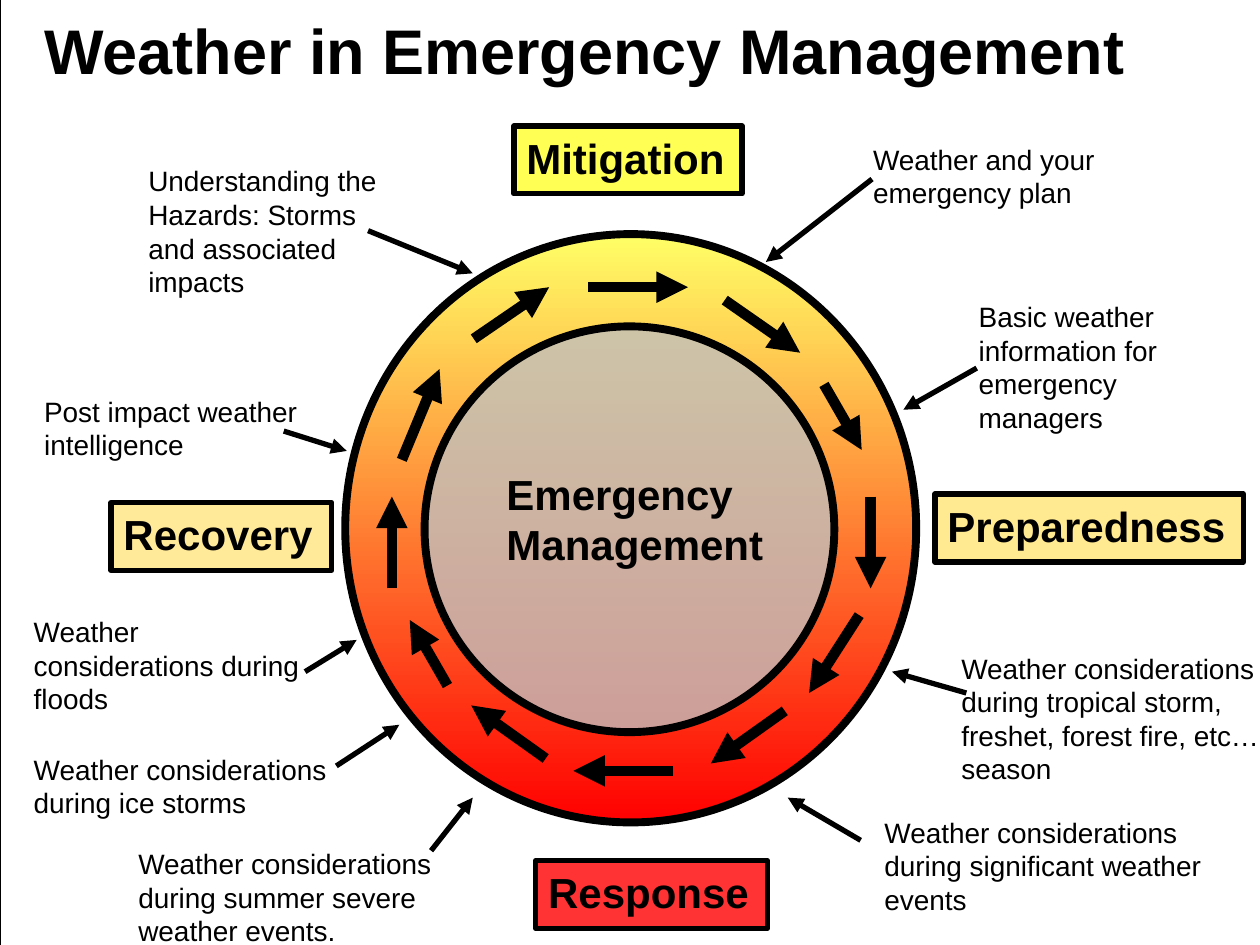
from typing import NamedTuple

from lxml import etree
from pptx import Presentation
from pptx import util as u
from pptx.dml.color import RGBColor
from pptx.enum import shapes, text
from pptx.oxml import ns

BLACK = RGBColor(0, 0, 0)
WHITE = RGBColor(0xFF, 0xFF, 0xFF)
GRAY = RGBColor(0xC0, 0xC0, 0xC0)
LEMON = RGBColor(0xFF, 0xFF, 0x66)
YELLOW = RGBColor(0xFF, 0xFF, 0)
AMBER = RGBColor(0xFF, 0xCC, 0)
RED = RGBColor(0xFF, 0, 0)
FONT = "Arial"
RECT = shapes.MSO_SHAPE.RECTANGLE
OVAL = shapes.MSO_SHAPE.OVAL


class Area(NamedTuple):
    """Left, top, width and height in centimetres."""
    x: float
    y: float
    w: float
    h: float


class Phase(NamedTuple):
    name: str
    area: Area
    color: RGBColor
    alpha: int


class Note(NamedTuple):
    lines: list[str]
    area: Area


class Arrow(NamedTuple):
    """Start and end points in centimetres."""
    x1: float
    y1: float
    x2: float
    y2: float


PHASES = [
    Phase("Mitigation", Area(10.36, 2.54, 4.6, 1.37), YELLOW, 67),
    Phase("Preparedness", Area(18.85, 9.96, 6.22, 1.37), AMBER, 43),
    Phase("Response", Area(10.8, 17.35, 4.67, 1.37), RED, 80),
    Phase("Recovery", Area(2.24, 10.13, 4.45, 1.37), AMBER, 40),
]

NOTES = [
    Note(["Understanding the Hazards: Storms and associated impacts"],
         Area(2.74, 3.18, 5.72, 2.97)),
    Note(["Weather and your emergency plan"], Area(17.35, 2.74, 5.72, 1.63)),
    Note(["Basic weather information for emergency managers"],
         Area(19.48, 5.92, 4.88, 2.97)),
    Note(["Post impact weather intelligence"], Area(0.64, 7.82, 5.72, 1.63)),
    Note(["Weather considerations during tropical storm, freshet, "
          "forest fire, etc… season"], Area(19.13, 13, 6.99, 3)),
    Note(["Weather considerations during significant weather events"],
         Area(17.58, 16.31, 6.99, 2.31)),
    Note(["Weather considerations during ice storms"],
         Area(0.43, 15.04, 6.99, 1.63)),
    Note(["Weather considerations during summer severe weather events."],
         Area(2.54, 16.94, 6.99, 2.31)),
    Note(["Weather", "considerations during floods"],
         Area(0.43, 12.27, 6.99, 2.29)),
]

# Clockwise around the ring, from the left
CYCLE = [
    Arrow(8.1, 9.27, 8.86, 7.44),
    Arrow(9.55, 6.83, 11.07, 5.79),
    Arrow(11.86, 5.79, 13.87, 5.79),
    Arrow(14.61, 6.05, 16.13, 7.11),
    Arrow(16.61, 7.75, 17.37, 9.07),
    Arrow(17.55, 10.01, 17.55, 11.86),
    Arrow(17.32, 12.4, 16.31, 13.97),
    Arrow(15.82, 14.33, 14.33, 15.39),
    Arrow(13.56, 15.54, 11.56, 15.54),
    Arrow(11, 15.29, 9.5, 14.22),
    Arrow(9.02, 13.82, 8.26, 12.5),
    Arrow(7.9, 11.86, 7.9, 10.01),
]

# From the notes to the ring
POINTERS = [
    Arrow(7.42, 4.65, 9.53, 5.51),
    Arrow(17.58, 3.61, 15.44, 5.28),
    Arrow(19.69, 7.42, 18.21, 8.26),
    Arrow(19.48, 13.97, 17.98, 13.54),
    Arrow(17.35, 16.94, 15.88, 16.08),
    Arrow(8.69, 17.15, 9.53, 16.08),
    Arrow(6.78, 15.44, 8.05, 14.61),
    Arrow(6.15, 13.54, 7.19, 12.9),
    Arrow(5.72, 8.69, 6.99, 9.09),
]


def span(area: Area) -> list[int]:
    return [u.Cm(v) for v in area]


def write(para, lines: list[str], size: float, bold: bool = False) -> None:
    para.alignment = text.PP_ALIGN.LEFT
    for i, line in enumerate(lines):
        if i:
            para.add_line_break()
        run = para.add_run()
        run.text = line
        run.font.name = FONT
        run.font.size = u.Pt(size)
        run.font.bold = bold
        run.font.color.rgb = BLACK


def tint(shape, color: RGBColor, alpha: int) -> None:
    shape.fill.solid()
    shape.fill.fore_color.rgb = color
    node = shape.fill._xPr.find(".//" + ns.qn("a:srgbClr"))
    etree.SubElement(node, ns.qn("a:alpha"), val=str(alpha * 1000))


def draw_shape(slide, kind, area: Area, width: float):
    shape = slide.shapes.add_shape(kind, *span(area))
    shape.shadow.inherit = False
    shape.line.color.rgb = BLACK
    shape.line.width = u.Pt(width)
    return shape


def draw_phase(slide, phase: Phase) -> None:
    box = draw_shape(slide, RECT, phase.area, 3)
    tint(box, phase.color, phase.alpha)
    frame = box.text_frame
    frame.word_wrap = False
    frame.vertical_anchor = text.MSO_ANCHOR.TOP
    write(frame.paragraphs[0], [phase.name], 24, True)


def draw_note(slide, note: Note) -> None:
    frame = slide.shapes.add_textbox(*span(note.area)).text_frame
    frame.word_wrap = True
    write(frame.paragraphs[0], note.lines, 16)


def draw_arrow(slide, arrow: Arrow, width: float) -> None:
    line = slide.shapes.add_connector(
        shapes.MSO_CONNECTOR.STRAIGHT, *(u.Cm(v) for v in arrow))
    line.line.color.rgb = BLACK
    line.line.width = u.Pt(width)
    etree.SubElement(line.line._ln, ns.qn("a:tailEnd"), type="triangle")
    etree.SubElement(line._element.spPr, ns.qn("a:effectLst"))


def main() -> None:
    deck = Presentation()
    deck.slide_width, deck.slide_height = u.Cm(25.4), u.Cm(19.05)
    slide = deck.slides.add_slide(deck.slide_layouts[5])

    # Backdrop, sent behind the title
    back = draw_shape(slide, RECT, Area(0, -0.64, 26.04, 20.52), 0.75)
    tint(back, WHITE, 90)
    title = slide.shapes.title
    title._element.addprevious(back._element)

    # Title
    title.left, title.top, title.width, title.height = span(
        Area(0.64, 0.25, 23.27, 1.47))
    frame = title.text_frame
    frame.auto_size = text.MSO_AUTO_SIZE.NONE
    frame.vertical_anchor = text.MSO_ANCHOR.MIDDLE
    write(frame.paragraphs[0], ["Weather in Emergency Management"], 36, True)

    # Ring and core
    ring = draw_shape(slide, OVAL, Area(6.96, 4.72, 11.51, 11.86), 4.5)
    ring.fill.gradient()
    ring.fill.gradient_angle = 270
    for stop, color in zip(ring.fill.gradient_stops, (LEMON, RED)):
        stop.color.rgb = color
    core = draw_shape(slide, OVAL, Area(8.56, 6.58, 8.26, 8.18), 4.5)
    tint(core, GRAY, 78)
    label = slide.shapes.add_textbox(*span(Area(9.96, 9.32, 5.69, 2.29)))
    frame = label.text_frame
    write(frame.paragraphs[0], ["Emergency"], 24, True)
    write(frame.add_paragraph(), ["Management"], 24, True)

    # Phases, notes and arrows
    for phase in PHASES:
        draw_phase(slide, phase)
    for note in NOTES:
        draw_note(slide, note)
    for arrow in CYCLE:
        draw_arrow(slide, arrow, 6)
    for arrow in POINTERS:
        draw_arrow(slide, arrow, 3)

    deck.save("out.pptx")


if __name__ == "__main__":
    main()
